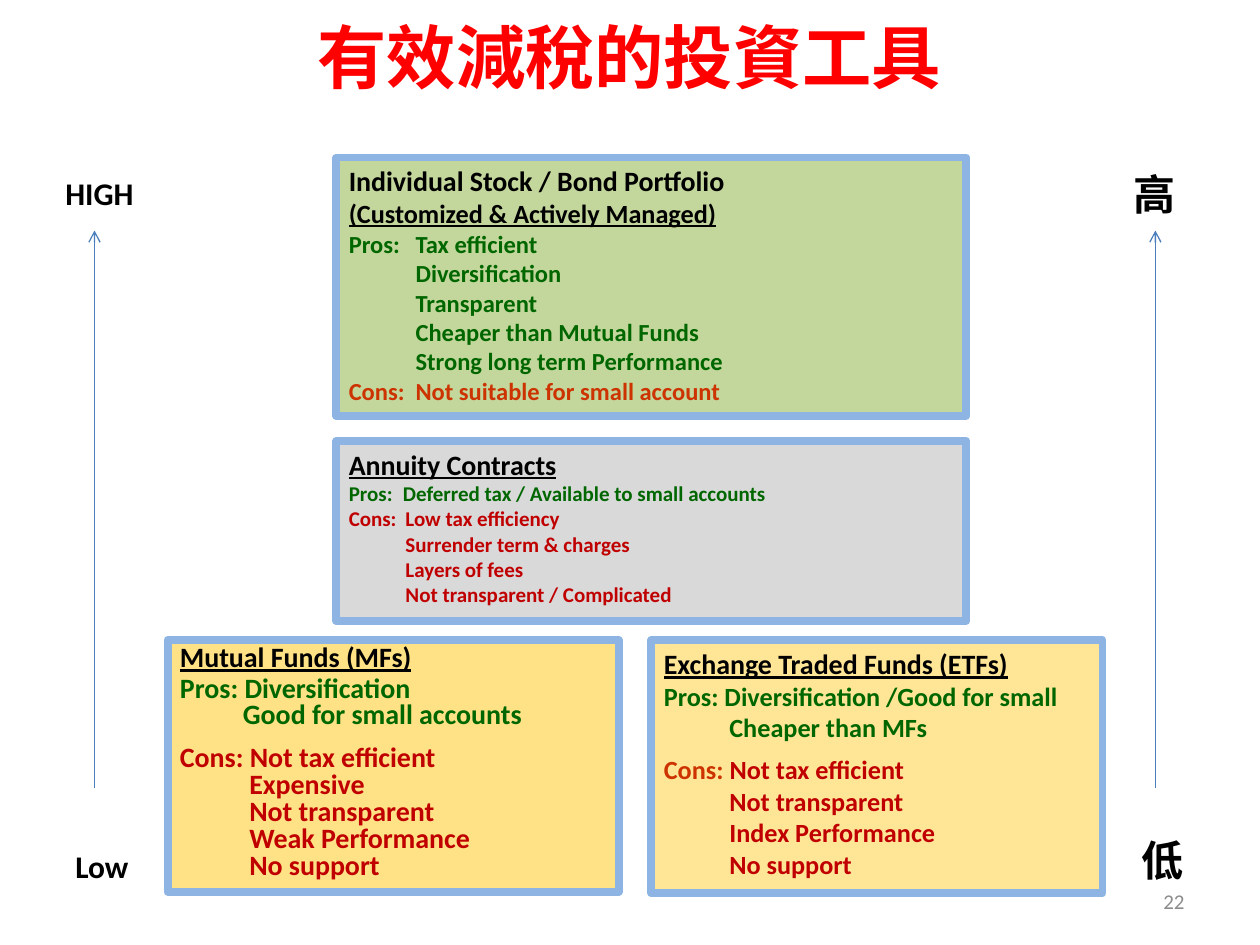
"""Build a slide ranking investment tools by tax efficiency."""
from dataclasses import dataclass

from lxml.etree import SubElement
from pptx import Presentation
from pptx.dml.color import RGBColor
from pptx.enum.shapes import MSO_CONNECTOR as Link, MSO_SHAPE as Form
from pptx.enum.text import MSO_ANCHOR as Anchor, PP_ALIGN as Align
from pptx.oxml.ns import qn
from pptx.util import Inches, Pt

BLACK, GREEN, RED, RUST = "000000", "006600", "C00000", "CC3300"
HAN = "Noto Sans CJK TC"


@dataclass
class Row:
    text: str
    size: float = 16
    color: str = BLACK
    hang: float = 0
    inset: bool = False
    under: bool = False
    before: float = 0
    lead: str = ""
    lead_color: str = RUST


@dataclass
class Card:
    left: float
    top: float
    width: float
    height: float
    fill: str
    rows: list[Row]
    pitch: float = 1.0


@dataclass
class Label:
    text: str
    left: float
    top: float
    width: float
    height: float
    size: float = 18
    face: str = "Calibri"
    color: str = BLACK
    bold: bool = True
    align: Align = Align.LEFT
    anchor: Anchor = Anchor.TOP


def rgb(code: str) -> RGBColor:
    return RGBColor.from_string(code)


def style(para, size: float, color: str, bold: bool = True, face: str = "Calibri") -> None:
    font = para.font
    font.size, font.bold, font.name = Pt(size), bold, face
    font.color.rgb = rgb(color)
    props = para._p.get_or_add_pPr().find(qn("a:defRPr"))
    SubElement(props, qn("a:ea")).set("typeface", HAN)


def place(shape, left: float, top: float, width: float, height: float) -> None:
    shape.left, shape.top = Inches(left), Inches(top)
    shape.width, shape.height = Inches(width), Inches(height)


def add_row(para, row: Row, pitch: float) -> None:
    style(para, row.size, row.color)
    para.alignment = Align.LEFT
    para.line_spacing = pitch
    para.space_before = Pt(row.before)
    para.font.underline = row.under
    props = para._p.get_or_add_pPr()
    props.set("marL", str(Inches(row.hang)))
    props.set("indent", str(0 if row.inset else -Inches(row.hang)))
    if row.lead:
        run = para.add_run()
        run.text = row.lead
        run.font.color.rgb = rgb(row.lead_color)
    para.add_run().text = row.text


def add_card(slide, card: Card) -> None:
    box = slide.shapes.add_shape(Form.RECTANGLE, 0, 0, 0, 0)
    place(box, card.left, card.top, card.width, card.height)
    box.shadow.inherit = False
    box.fill.solid()
    box.fill.fore_color.rgb = rgb(card.fill)
    box.line.color.rgb = rgb("8EB4E3")
    box.line.width = Pt(4.5)
    frame = box.text_frame
    frame.word_wrap, frame.vertical_anchor = True, Anchor.TOP
    for i, row in enumerate(card.rows):
        para = frame.add_paragraph() if i else frame.paragraphs[0]
        add_row(para, row, card.pitch)


def add_label(slide, label: Label) -> None:
    box = slide.shapes.add_textbox(0, 0, 0, 0)
    place(box, label.left, label.top, label.width, label.height)
    frame = box.text_frame
    frame.word_wrap, frame.vertical_anchor = True, label.anchor
    para = frame.paragraphs[0]
    para.text, para.alignment = label.text, label.align
    style(para, label.size, label.color, label.bold, label.face)


def add_arrow(slide, x: float, low: float = 6.25, high: float = 1.83) -> None:
    line = slide.shapes.add_connector(
        Link.STRAIGHT, Inches(x), Inches(low), Inches(x), Inches(high))
    line.line.color.rgb = rgb("4B7EBC")
    line.line.width = Pt(0.75)
    SubElement(line.line._get_or_add_ln(), qn("a:tailEnd")).set("type", "arrow")
    SubElement(line._element.spPr, qn("a:effectLst"))


def points(texts: list[str], size: float, color: str, hang: float) -> list[Row]:
    return [Row(text, size, color, hang, inset=True) for text in texts]


CARDS = [
    Card(1.33, 5.08, 3.58, 2, "FFE285", [
        Row("Mutual Funds (MFs)", under=True),
        Row("Pros: Diversification", color=GREEN, hang=0.5, before=2),
        *points(["Good for small accounts"], 16, GREEN, 0.5),
        Row("Cons: Not tax efficient", color=RED, hang=0.55, before=9),
        *points(["Expensive", "Not transparent", "Weak Performance", "No support"],
                16, RED, 0.55),
    ], pitch=0.8),
    Card(5.17, 5.08, 3.58, 2.01, "FFE697", [
        Row("Exchange Traded Funds (ETFs)", under=True),
        Row("Pros: Diversification /Good for small", 15, GREEN, 0.52),
        *points(["Cheaper than MFs"], 15, GREEN, 0.52),
        Row("Not tax efficient", 15, RED, 0.52, before=6, lead="Cons: "),
        *points(["Not transparent", "Index Performance", "No support"], 15, RED, 0.52),
    ]),
    Card(2.67, 1.25, 5, 2.05, "C3D69B", [
        Row("Individual Stock / Bond Portfolio"),
        Row("(Customized & Actively Managed)", 15, under=True),
        Row("Pros:\tTax efficient", 14, GREEN, 0.53),
        *points(["Diversification", "Transparent", "Cheaper than Mutual Funds",
                 "Strong long term Performance"], 14, GREEN, 0.53),
        Row("Cons:\tNot suitable for small account", 14, RUST, 0.53),
    ]),
    Card(2.67, 3.5, 5, 1.43, "D9D9D9", [
        Row("Annuity Contracts", under=True),
        Row("Pros:\tDeferred tax / Available to small accounts", 12, GREEN, 0.43),
        Row("Cons:\tLow tax efficiency", 12, RED, 0.45),
        *points(["Surrender term & charges", "Layers of fees",
                 "Not transparent / Complicated"], 12, RED, 0.45),
    ]),
]

LABELS = [
    Label("HIGH", 0.42, 1.33, 0.92, 0.4),
    Label("Low", 0.5, 6.67, 0.83, 0.4),
    Label("高", 8.9, 1.29, 0.54, 0.51, 24),
    Label("低", 8.96, 6.57, 0.54, 0.51, 24),
    Label("22", 7.17, 6.95, 2.33, 0.4, 12, color="8C8C8C", bold=False,
          align=Align.RIGHT, anchor=Anchor.MIDDLE),
]


def main() -> None:
    deck = Presentation()
    deck.slide_width, deck.slide_height = Inches(10), Inches(7.5)
    slide = deck.slides.add_slide(deck.slide_layouts[5])
    title = slide.shapes.title
    place(title, 1.83, 0.08, 6.33, 0.72)
    frame = title.text_frame
    frame.text, frame.vertical_anchor = "有效減稅的投資工具", Anchor.MIDDLE
    frame.paragraphs[0].alignment = Align.CENTER
    style(frame.paragraphs[0], 39.6, "FF0000", face=HAN)
    for card in CARDS:
        add_card(slide, card)
    for x in (0.75, 9.17):
        add_arrow(slide, x)
    for label in LABELS:
        add_label(slide, label)
    deck.save("out.pptx")


if __name__ == "__main__":
    main()
